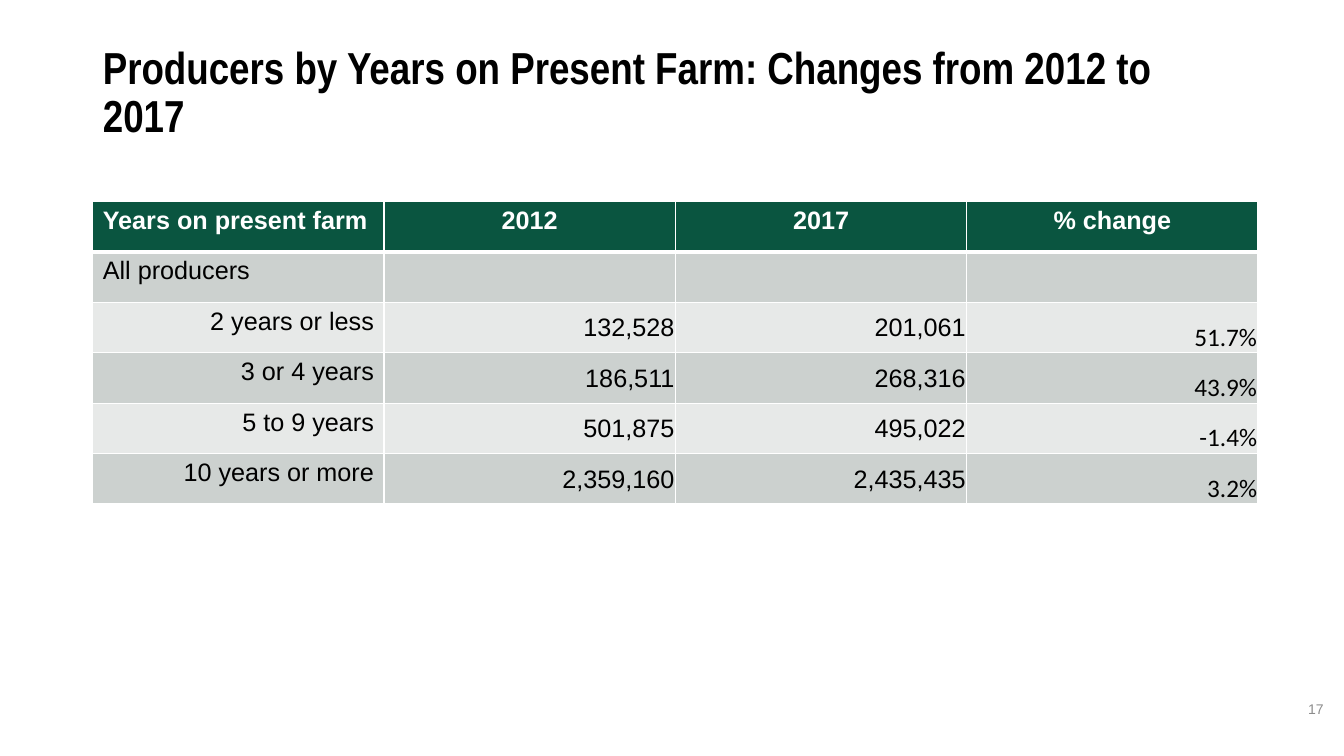
from dataclasses import dataclass

from lxml import etree
from pptx import Presentation
from pptx.dml.color import RGBColor
from pptx.enum.text import MSO_ANCHOR, MSO_AUTO_SIZE, PP_ALIGN
from pptx.oxml.ns import qn
from pptx.util import Pt

LEFT, CENTER, RIGHT = PP_ALIGN.LEFT, PP_ALIGN.CENTER, PP_ALIGN.RIGHT
TOP, MIDDLE, BOTTOM = MSO_ANCHOR.TOP, MSO_ANCHOR.MIDDLE, MSO_ANCHOR.BOTTOM
TITLE_ONLY = 5

BLACK, WHITE, GREY = "000000", "FFFFFF", "8C8C8C"
HEADER_GREEN = "0A5540"
BANDS = ("CCD1CF", "E7E9E8")
ROOMY = (7.2, 3.6, 7.2, 3.6)
TIGHT = (0.72, 0.72, 0.72, 0)

COLUMN_WIDTH, ROW_HEIGHT = 208.1, 36
HEADINGS = ("Years on present farm", "2012", "2017", "% change")
PRODUCERS = (
    ("All producers", "", "", ""),
    ("2 years or less", "132,528", "201,061", "51.7%"),
    ("3 or 4 years", "186,511", "268,316", "43.9%"),
    ("5 to 9 years", "501,875", "495,022", "-1.4%"),
    ("10 years or more", "2,359,160", "2,435,435", "3.2%"),
)


@dataclass(frozen=True)
class CellStyle:
    align: PP_ALIGN
    anchor: MSO_ANCHOR = TOP
    insets: tuple[float, ...] = ROOMY
    font: str = "Arial"
    color: str = BLACK
    bold: bool = False


HEADING_FIRST = CellStyle(LEFT, color=WHITE, bold=True)
HEADING = CellStyle(CENTER, color=WHITE, bold=True)
GROUP = CellStyle(LEFT)
YEARS = CellStyle(RIGHT)
COUNT = CellStyle(RIGHT, MIDDLE, TIGHT)
CHANGE = CellStyle(RIGHT, BOTTOM, TIGHT, "Calibri")

HEADING_STYLES = (HEADING_FIRST, HEADING, HEADING, HEADING)
GROUP_STYLES = (GROUP,) * 4
DATA_STYLES = (YEARS, COUNT, COUNT, CHANGE)


def rgb(color: str) -> RGBColor:
    return RGBColor.from_string(color)


def format_paragraph(paragraph, align: PP_ALIGN, font: str, size: float,
                     color: str, bold: bool = False) -> None:
    paragraph.alignment = align
    paragraph.font.name = font
    paragraph.font.size = Pt(size)
    paragraph.font.bold = bold
    paragraph.font.color.rgb = rgb(color)


def add_borders(cell, top: float, bottom: float) -> None:
    """Draw white cell borders; must precede the cell fill."""
    properties = cell._tc.get_or_add_tcPr()
    for side, width in (("L", 1), ("R", 1), ("T", top), ("B", bottom)):
        line = etree.SubElement(properties, qn(f"a:ln{side}"), w=str(Pt(width)))
        fill = etree.SubElement(line, qn("a:solidFill"))
        etree.SubElement(fill, qn("a:srgbClr"), val=WHITE)


def fill_cell(cell, text: str, style: CellStyle, row: int) -> None:
    add_borders(cell, top=3 if row == 1 else 1, bottom=3 if row == 0 else 1)
    cell.fill.solid()
    cell.fill.fore_color.rgb = rgb(BANDS[(row - 1) % 2] if row else HEADER_GREEN)
    cell.vertical_anchor = style.anchor
    (cell.margin_left, cell.margin_top,
     cell.margin_right, cell.margin_bottom) = map(Pt, style.insets)
    cell.text = text
    format_paragraph(cell.text_frame.paragraphs[0], style.align, style.font,
                     18, style.color, style.bold)


def add_title(slide) -> None:
    title = slide.shapes.title
    title.left, title.top, title.width, title.height = map(Pt, (66.24, 28.8, 828, 104.4))
    frame = title.text_frame
    frame.text = "Producers by Years on Present Farm: Changes from 2012 to 2017"
    frame.word_wrap = True
    frame.auto_size = MSO_AUTO_SIZE.NONE
    frame.vertical_anchor = TOP
    heading = frame.paragraphs[0]
    heading.line_spacing = 0.9
    format_paragraph(heading, LEFT, "Arial Narrow", 32, BLACK, True)


def add_producer_table(slide) -> None:
    rows = (HEADINGS, *PRODUCERS)
    table = slide.shapes.add_table(
        len(rows), len(HEADINGS), Pt(66.24), Pt(144),
        Pt(COLUMN_WIDTH * len(HEADINGS)), Pt(ROW_HEIGHT * len(rows))).table
    table.horz_banding = False
    for column in table.columns:
        column.width = Pt(COLUMN_WIDTH)
    row_styles = (HEADING_STYLES, GROUP_STYLES) + (DATA_STYLES,) * (len(rows) - 2)
    for row, (texts, styles) in enumerate(zip(rows, row_styles)):
        table.rows[row].height = Pt(ROW_HEIGHT)
        for column, (text, style) in enumerate(zip(texts, styles)):
            fill_cell(table.cell(row, column), text, style, row)


def add_page_number(slide) -> None:
    frame = slide.shapes.add_textbox(Pt(736.56), Pt(491.76), Pt(216), Pt(28.8)).text_frame
    frame.word_wrap = True
    frame.vertical_anchor = MIDDLE
    frame.text = "17"
    format_paragraph(frame.paragraphs[0], RIGHT, "Arial", 10, GREY)


def main() -> None:
    presentation = Presentation()
    presentation.slide_width, presentation.slide_height = Pt(960), Pt(540)
    slide = presentation.slides.add_slide(presentation.slide_layouts[TITLE_ONLY])
    add_title(slide)
    add_producer_table(slide)
    add_page_number(slide)
    presentation.save("out.pptx")


if __name__ == "__main__":
    main()
